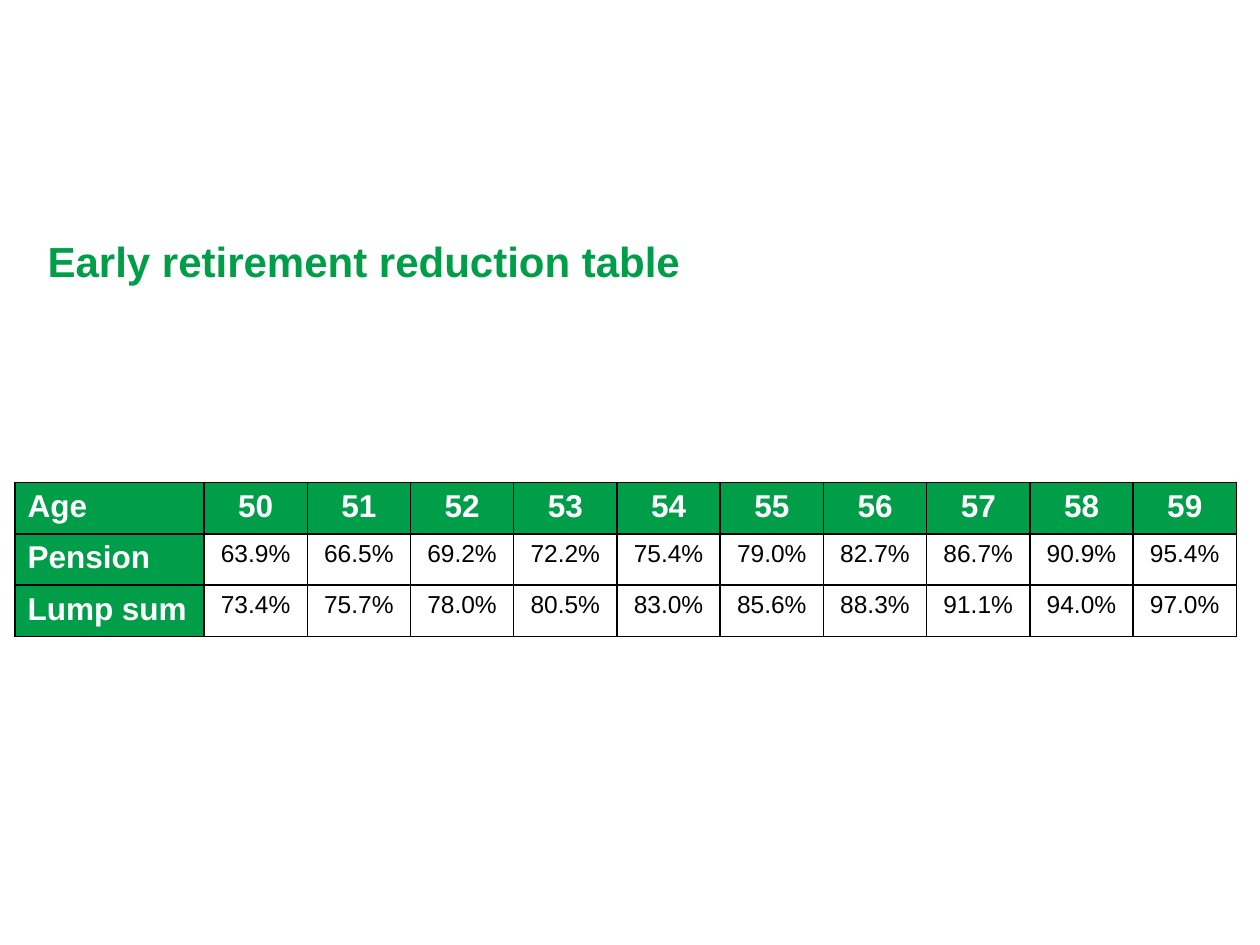
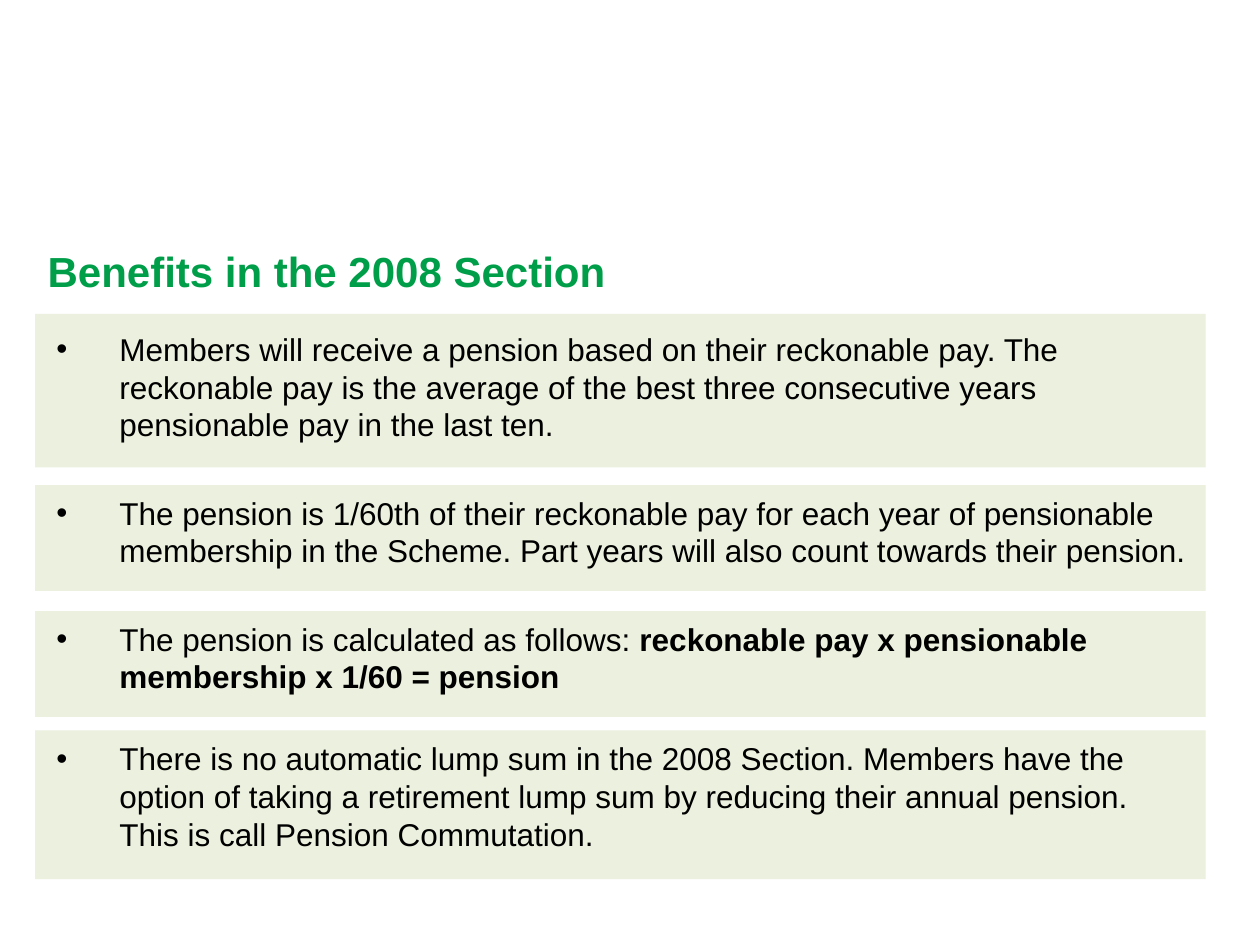
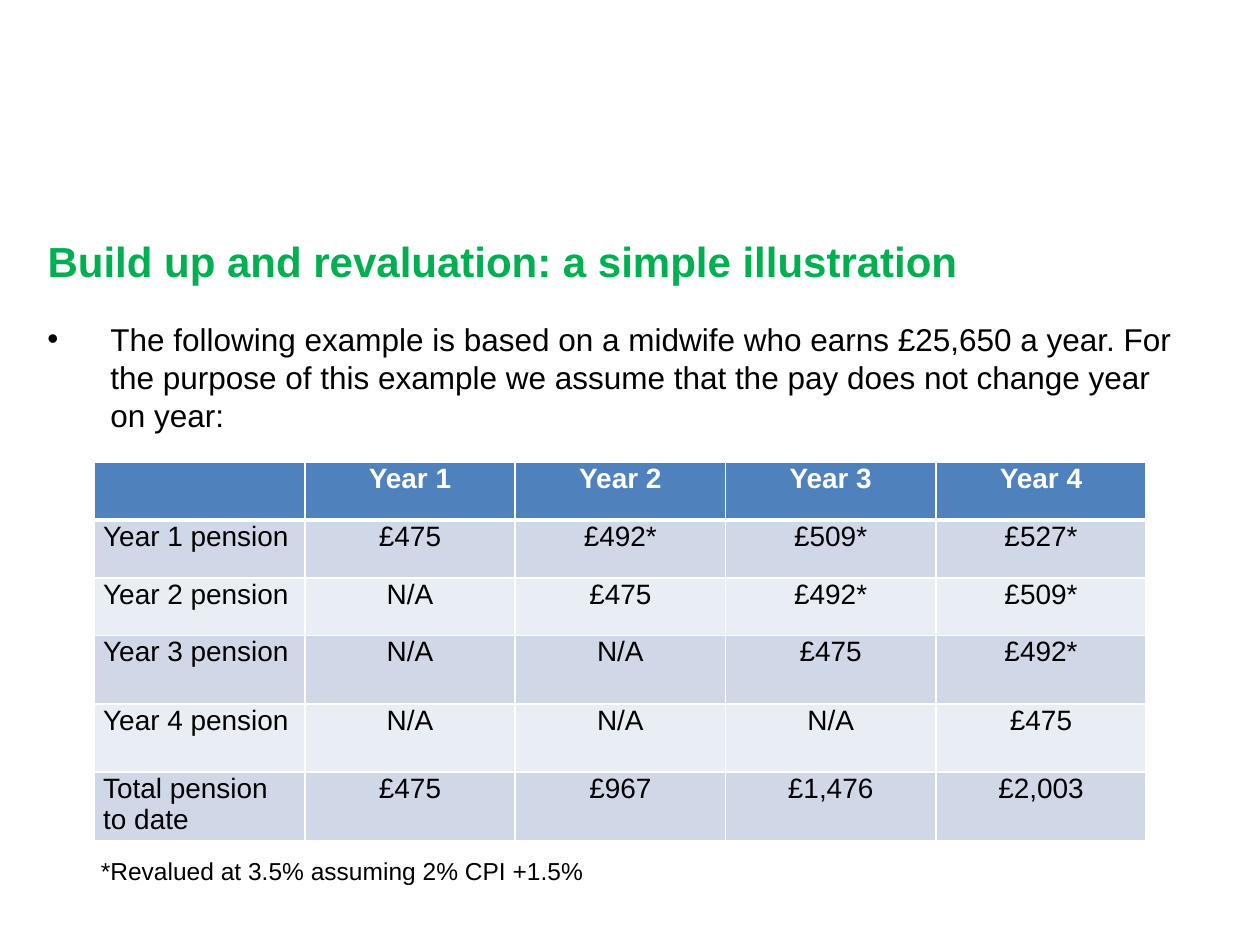
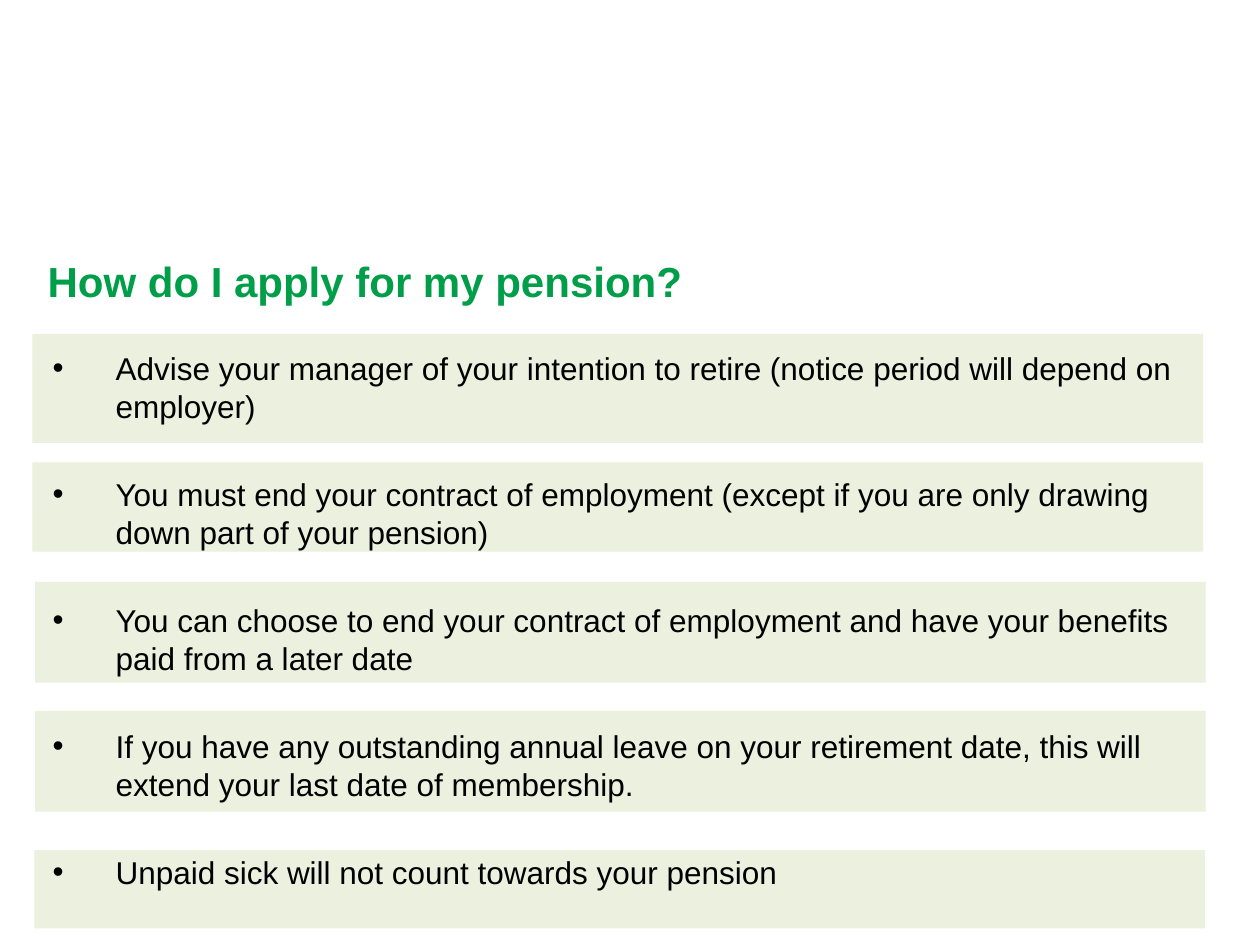
from itertools import product

from lxml import etree
from pptx import Presentation
from pptx.dml.color import RGBColor
from pptx.enum.shapes import MSO_SHAPE
from pptx.enum.text import MSO_ANCHOR, PP_ALIGN
from pptx.oxml.ns import qn
from pptx.util import Pt

FONT = "Arial"
GREEN = RGBColor(0x00, 0x9E, 0x49)
BRIGHT_GREEN = RGBColor(0x00, 0xB0, 0x50)
PANEL_GREEN = RGBColor(0xEB, 0xF1, 0xDE)
HEADER_BLUE = RGBColor(0x4F, 0x81, 0xBD)
BAND_COLORS = (RGBColor(0xD0, 0xD8, 0xE8), RGBColor(0xE9, 0xED, 0xF4))
BLACK = RGBColor(0x00, 0x00, 0x00)
WHITE = RGBColor(0xFF, 0xFF, 0xFF)

TITLE_SIZE, BODY_SIZE, TABLE_SIZE, SMALL_SIZE = 24, 18, 16, 14
BODY_LINE = 21.6
BODY_GAP = 28.8
BULLET_INDENT = 36
BODY_WIDTH, BODY_HEIGHT = 664, 335
PANEL_WIDTH = 669

REDUCTIONS = [
    ["Age", *(str(age) for age in range(50, 60))],
    ["Pension", "63.9%", "66.5%", "69.2%", "72.2%", "75.4%",
     "79.0%", "82.7%", "86.7%", "90.9%", "95.4%"],
    ["Lump sum", "73.4%", "75.7%", "78.0%", "80.5%", "83.0%",
     "85.6%", "88.3%", "91.1%", "94.0%", "97.0%"],
]
REVALUATION = [
    ["", "Year 1", "Year 2", "Year 3", "Year 4"],
    ["Year 1 pension", "£475", "£492*", "£509*", "£527*"],
    ["Year 2 pension", "N/A", "£475", "£492*", "£509*"],
    ["Year 3 pension", "N/A", "N/A", "£475", "£492*"],
    ["Year 4 pension", "N/A", "N/A", "N/A", "£475"],
    ["Total pension to date", "£475", "£967", "£1,476", "£2,003"],
]

# Each bullet: space before, plain text, bold ending
BENEFITS = [
    (0, "Members will receive a pension based on their reckonable pay. The reckonable "
        "pay is the average of the best three consecutive years pensionable pay in the "
        "last ten.", ""),
    (BODY_GAP, "The pension is 1/60th of their reckonable pay for each year of pensionable "
               "membership in the Scheme. Part years will also count towards their "
               "pension.", ""),
    (BODY_GAP, "The pension is calculated as follows: ",
     "reckonable pay x pensionable membership x 1/60 = pension"),
    (25.2, "There is no automatic lump sum in the 2008 Section. Members have the option of "
           "taking a retirement lump sum by reducing their annual pension. This is call "
           "Pension Commutation.", ""),
]
EXAMPLE = [
    (0, "The following example is based on a midwife who earns £25,650 a year. For the "
        "purpose of this example we assume that the pay does not change year on year:", ""),
]
APPLICATION_STEPS = [
    (0, "Advise your manager of your intention to retire (notice period will depend on "
        "employer)", ""),
    (BODY_GAP, "You must end your contract of employment (except if you are only drawing "
               "down part of your pension)", ""),
    (BODY_GAP, "You can choose to end your contract of employment and have your benefits "
               "paid from a later date", ""),
    (BODY_GAP, "If you have any outstanding annual leave on your retirement date, this "
               "will extend your last date of membership.", ""),
    (BODY_GAP, "Unpaid sick will not count towards your pension", ""),
]

# Panels: left, top, height
BENEFIT_PANELS = [(20, 179.3, 87.8), (20, 277.2, 60.5), (20, 349.2, 60.5), (20, 417.4, 85)]
STEP_PANELS = [(18.5, 190.8, 62.3), (18.5, 264.2, 51), (20, 332.5, 57.6),
               (20, 406.2, 57.6), (19.6, 485.8, 44.8)]


def style_font(font, size, color=BLACK, bold=False):
    font.name = FONT
    font.size = Pt(size)
    font.bold = bold
    font.color.rgb = color


def add_titled_slide(presentation, title_text, top, left=20, color=GREEN):
    slide = presentation.slides.add_slide(presentation.slide_layouts[5])
    title = slide.shapes.title
    title.left, title.top, title.width, title.height = Pt(left), Pt(top), Pt(664), Pt(45)
    frame = title.text_frame
    frame.text = title_text
    frame.vertical_anchor = MSO_ANCHOR.TOP
    frame.margin_top = Pt(6.5)
    paragraph = frame.paragraphs[0]
    paragraph.alignment = PP_ALIGN.LEFT
    style_font(paragraph.runs[0].font, TITLE_SIZE, color, True)
    return slide


def add_panels(slide, panels):
    for left, top, height in panels:
        panel = slide.shapes.add_shape(
            MSO_SHAPE.RECTANGLE, Pt(left), Pt(top), Pt(PANEL_WIDTH), Pt(height))
        panel.shadow.inherit = False
        panel.fill.solid()
        panel.fill.fore_color.rgb = PANEL_GREEN
        panel.line.fill.background()


def make_bullet(paragraph):
    properties = paragraph._p.get_or_add_pPr()
    properties.set("marL", str(Pt(BULLET_INDENT)))
    properties.set("indent", str(-Pt(BULLET_INDENT)))
    etree.SubElement(properties, qn("a:buFont"), typeface=FONT)
    etree.SubElement(properties, qn("a:buChar"), char="•")


def add_bullets(slide, left, top, bullets):
    box = slide.shapes.add_textbox(Pt(left), Pt(top), Pt(BODY_WIDTH), Pt(BODY_HEIGHT))
    frame = box.text_frame
    frame.word_wrap = True
    for index, (space_before, plain, bold) in enumerate(bullets):
        paragraph = frame.add_paragraph() if index else frame.paragraphs[0]
        make_bullet(paragraph)
        paragraph.line_spacing = Pt(BODY_LINE)
        paragraph.space_before = Pt(space_before)
        for text, is_bold in ((plain, False), (bold, True)):
            if text:
                run = paragraph.add_run()
                run.text = text
                style_font(run.font, BODY_SIZE, bold=is_bold)


def add_note(slide, left, top, text):
    box = slide.shapes.add_textbox(Pt(left), Pt(top), Pt(298), Pt(24.5))
    frame = box.text_frame
    frame.text = text
    frame.vertical_anchor = MSO_ANCHOR.MIDDLE
    style_font(frame.paragraphs[0].runs[0].font, SMALL_SIZE)


def set_borders(cell, color, top=1, bottom=1):
    properties = cell._tc.get_or_add_tcPr()
    for side, width in (("L", 1), ("R", 1), ("T", top), ("B", bottom)):
        line = etree.SubElement(properties, qn(f"a:ln{side}"), w=str(Pt(width)))
        fill = etree.SubElement(line, qn("a:solidFill"))
        etree.SubElement(fill, qn("a:srgbClr"), val=str(color))


def add_plain_table(slide, left, top, widths, heights, rows):
    """Add a table without style banding; the caller formats its cells."""
    table = slide.shapes.add_table(
        len(heights), len(widths), Pt(left), Pt(top), Pt(sum(widths)), Pt(sum(heights))).table
    table.first_row = table.horz_banding = False
    for column, width in zip(table.columns, widths):
        column.width = Pt(width)
    for row, height in zip(table.rows, heights):
        row.height = Pt(height)
    for r, c in product(range(len(heights)), range(len(widths))):
        cell = table.cell(r, c)
        cell.text = rows[r][c]
        cell.text_frame.paragraphs[0].alignment = PP_ALIGN.CENTER if c else PP_ALIGN.LEFT
    return table


def style_cell(cell, fill_color, size, text_color, bold):
    if fill_color is None:
        cell.fill.background()
    else:
        cell.fill.solid()
        cell.fill.fore_color.rgb = fill_color
    style_font(cell.text_frame.paragraphs[0].font, size, text_color, bold)
    for run in cell.text_frame.paragraphs[0].runs:
        style_font(run.font, size, text_color, bold)


def add_reduction_table(slide, left, top):
    widths = [108] + [59] * 10
    table = add_plain_table(slide, left, top, widths, [29.3] * 3, REDUCTIONS)
    for r, c in product(range(3), range(len(widths))):
        cell = table.cell(r, c)
        set_borders(cell, BLACK)
        if r == 0 or c == 0:
            style_cell(cell, GREEN, BODY_SIZE, WHITE, True)
        else:
            style_cell(cell, None, SMALL_SIZE, BLACK, False)


def add_revaluation_table(slide, left, top):
    heights = [33] * 3 + [39] * 3
    table = add_plain_table(slide, left, top, [120.2] * 5, heights, REVALUATION)
    for r, c in product(range(len(heights)), range(5)):
        cell = table.cell(r, c)
        cell.margin_left = cell.margin_right = Pt(5)
        cell.margin_top, cell.margin_bottom = Pt(0.7), Pt(0)
        set_borders(cell, WHITE, top=3 if r == 1 else 1, bottom=3 if r == 0 else 1)
        if r == 0:
            style_cell(cell, HEADER_BLUE, TABLE_SIZE, WHITE, True)
        else:
            style_cell(cell, BAND_COLORS[(r - 1) % 2], TABLE_SIZE, BLACK, False)


def main():
    presentation = Presentation()
    presentation.slide_width, presentation.slide_height = Pt(720), Pt(540)

    slide = add_titled_slide(presentation, "Early retirement reduction table", 128.2)
    add_reduction_table(slide, 8.6, 275.8)

    slide = add_titled_slide(presentation, "Benefits in the 2008 Section", 133.9)
    add_panels(slide, BENEFIT_PANELS)
    add_bullets(slide, 25.2, 185, BENEFITS)

    slide = add_titled_slide(presentation, "Build up and revaluation: a simple illustration",
                             128.2, color=BRIGHT_GREEN)
    add_bullets(slide, 20, 179.3, EXAMPLE)
    add_note(slide, 50.5, 485.3, "*Revalued at 3.5% assuming 2% CPI +1.5%")
    add_revaluation_table(slide, 54, 264.2)

    slide = add_titled_slide(presentation, "How do I apply for my pension?", 139.7)
    add_panels(slide, STEP_PANELS)
    add_bullets(slide, 23, 195.8, APPLICATION_STEPS)

    presentation.save("out.pptx")


if __name__ == "__main__":
    main()
